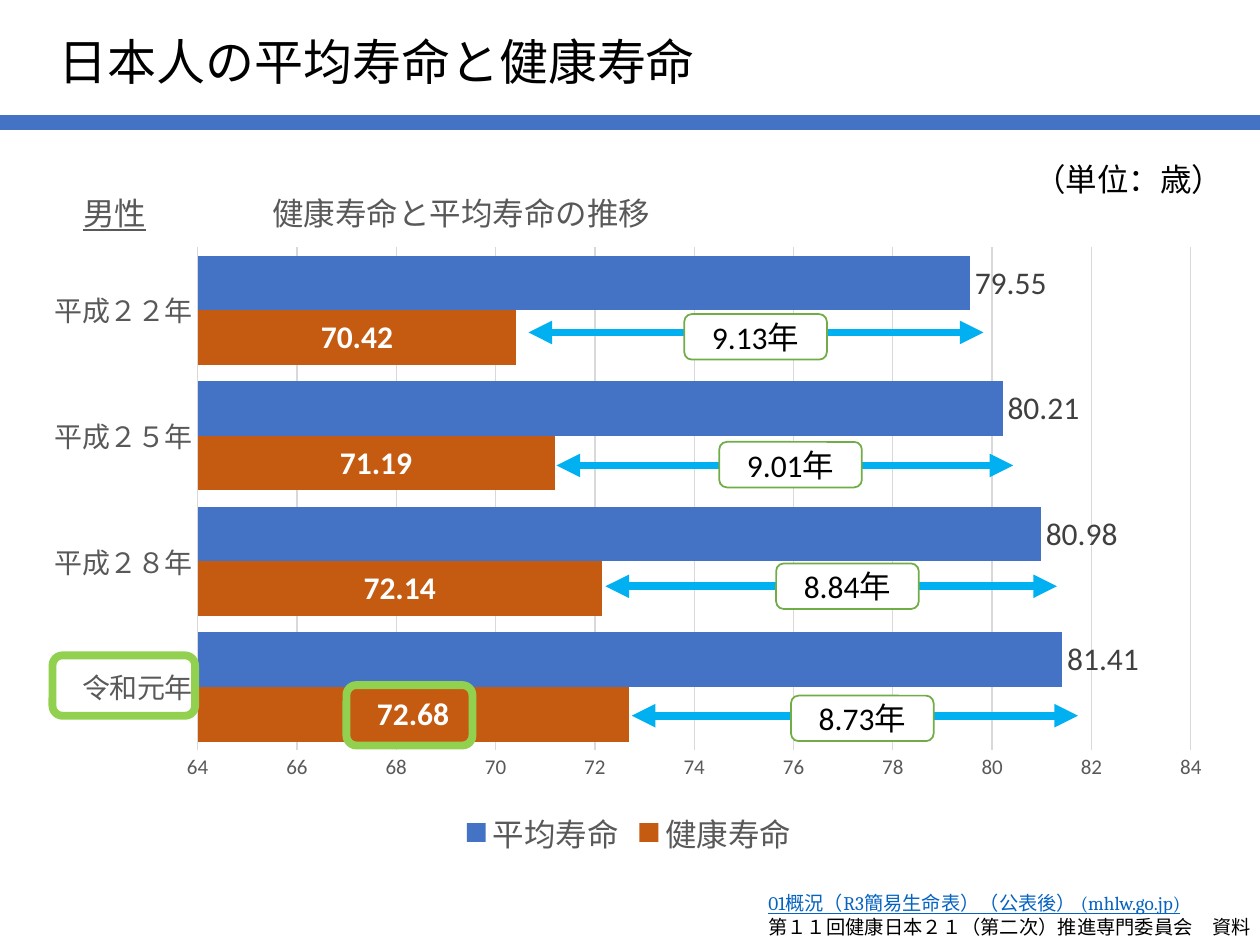
from pptx import Presentation
from pptx.chart.data import CategoryChartData
from pptx.dml.color import RGBColor
from pptx.enum.chart import XL_CHART_TYPE, XL_LABEL_POSITION, XL_LEGEND_POSITION, XL_TICK_MARK
from pptx.enum.shapes import MSO_CONNECTOR, MSO_SHAPE
from pptx.enum.text import MSO_ANCHOR, PP_ALIGN
from pptx.oxml import parse_xml
from pptx.oxml.ns import nsdecls, qn
from pptx.util import Pt
from lxml.etree import SubElement

THEME = {
    "font": "Calibri", "serif": "Cambria",
    "black": "000000", "white": "FFFFFF", "gray": "595959", "dark": "404040",
    "grid": "D9D9D9", "blue": "4472C4", "rust": "C55A11", "sky": "00B0F0",
    "lime": "92D050", "green": "70AD47", "link": "0563C1",
    "head": 28, "body": 18, "axis": 16, "tick": 12, "note": 11,
}

TITLE = "日本人の平均寿命と健康寿命"
UNIT = "（単位：歳）"
NOTES = [
    ("01概況（R3簡易生命表）（公表後） (mhlw.go.jp)", "link", True),
    ("第１１回健康日本２１（第二次）推進専門委員会　資料", "black", False),
]
HEADING = [("男性", True), ("　　　　健康寿命と平均寿命の推移", False)]
YEARS = ["令和元年", "平成２８年", "平成２５年", "平成２２年"]
# name, values, bar colour, label colour, bold label, label place
SERIES = [
    ("健康寿命", [72.68, 72.14, 71.19, 70.42], "rust", "white", True,
     XL_LABEL_POSITION.CENTER),
    ("平均寿命", [81.41, 80.98, 80.21, 79.55], "blue", "dark", False,
     XL_LABEL_POSITION.OUTSIDE_END),
]
# text, arrow start, arrow end, arrow height, badge left, badge top
GAPS = [
    ("9.13年", 302, 562, 190, 391, 179.5),
    ("9.01年", 318, 579, 266, 411, 252.5),
    ("8.84年", 346, 604, 335, 443.5, 322),
    ("8.73年", 361, 616, 409, 452, 397.5),
]
MARKS = [(30, 374.5, 81.5, 34.5), (198, 391.5, 72, 34.5)]


def color(key):
    return RGBColor.from_string(THEME[key])


def style(font, size, ink, face="font", bold=False, under=None):
    font.name = THEME[face]
    font.size = Pt(THEME[size])
    font.color.rgb = color(ink)
    font.bold = bold
    if under is not None:
        font.underline = under


def write(para, text, align=None, **form):
    run = para.add_run()
    run.text = text
    if align is not None:
        para.alignment = align
    style(run.font, **form)


def add_text(slide, left, top, width, height):
    frame = slide.shapes.add_textbox(Pt(left), Pt(top), Pt(width), Pt(height)).text_frame
    frame.word_wrap = True
    return frame


def add_line(slide, start, end, ink, weight, heads=False):
    line = slide.shapes.add_connector(
        MSO_CONNECTOR.STRAIGHT, *(Pt(n) for n in (*start, *end)))
    line.line.color.rgb = color(ink)
    line.line.width = Pt(weight)
    if heads:
        for tag in ("a:headEnd", "a:tailEnd"):
            SubElement(line.line._get_or_add_ln(), qn(tag), type="triangle")
    SubElement(line._element.spPr, qn("a:effectLst"))


def add_box(slide, place, ink, weight, fill=None):
    box = slide.shapes.add_shape(MSO_SHAPE.ROUNDED_RECTANGLE, *(Pt(n) for n in place))
    box.shadow.inherit = False
    if fill:
        box.fill.solid()
        box.fill.fore_color.rgb = color(fill)
    else:
        box.fill.background()
    box.line.color.rgb = color(ink)
    box.line.width = Pt(weight)
    return box


def layout(x, y, w=None, h=None):
    """Give a manual chart layout in shares of the chart's size."""
    inner = '<c:layoutTarget val="inner"/>' if w else ""
    size = f'<c:w val="{w}"/><c:h val="{h}"/>' if w else ""
    return parse_xml(
        f'<c:layout {nsdecls("c")}><c:manualLayout>{inner}<c:xMode val="edge"/>'
        f'<c:yMode val="edge"/><c:x val="{x}"/><c:y val="{y}"/>{size}'
        "</c:manualLayout></c:layout>")


def place(node, frame, after=None):
    """Swap in a manual layout, after the named child or first."""
    for old in node.findall(qn("c:layout")):
        node.remove(old)
    prior = node.find(qn(after)) if after else None
    if prior is None:
        node.insert(0, frame)
    else:
        prior.addnext(frame)


def add_bars(slide):
    data = CategoryChartData(number_format="0.00")
    data.categories = YEARS
    for name, values, *_ in SERIES:
        data.add_series(name, values)
    chart = slide.shapes.add_chart(
        XL_CHART_TYPE.BAR_CLUSTERED, Pt(18), Pt(88), Pt(683), Pt(404.5), data).chart
    style(chart.font, "tick", "gray")

    chart.has_title = True
    para = chart.chart_title.text_frame.paragraphs[0]
    for text, under in HEADING:
        write(para, text, size="body", ink="gray", under=under)
    chart.chart_title.include_in_layout = False
    place(chart.chart_title._element, layout(0.04, 0.04), "c:tx")
    place(chart._chartSpace.chart.plotArea, layout(0.139, 0.132, 0.831, 0.71))

    chart.has_legend = True
    chart.legend.position = XL_LEGEND_POSITION.BOTTOM
    chart.legend.include_in_layout = False
    style(chart.legend.font, "body", "gray")

    for axis, size in ((chart.category_axis, "axis"), (chart.value_axis, "tick")):
        axis.major_tick_mark = axis.minor_tick_mark = XL_TICK_MARK.NONE
        style(axis.tick_labels.font, size, "gray")
    ages = chart.value_axis
    ages.minimum_scale, ages.maximum_scale, ages.major_unit = 64, 84, 2
    ages.tick_labels.number_format = "0"
    ages.tick_labels.number_format_is_linked = False
    ages.format.line.fill.background()
    for line in (chart.category_axis.format.line, ages.major_gridlines.format.line):
        line.color.rgb = color("grid")
        line.width = Pt(0.75)

    plot = chart.plots[0]
    plot.gap_width = 30
    plot.overlap = 0
    plot.vary_by_categories = False
    for bars, (_, _, fill, ink, bold, spot) in zip(plot.series, SERIES):
        bars.format.fill.solid()
        bars.format.fill.fore_color.rgb = color(fill)
        labels = bars.data_labels
        labels.show_value = True
        labels.position = spot
        style(labels.font, "body", ink, bold=bold)


def main():
    deck = Presentation()
    deck.slide_width, deck.slide_height = Pt(720), Pt(540)
    slide = deck.slides.add_slide(deck.slide_layouts[6])

    add_line(slide, (0, 70), (720, 70), "blue", 9)
    write(add_text(slide, 584, 88, 124.5, 29).paragraphs[0], UNIT,
          size="body", ink="black")
    notes = add_text(slide, 432, 506, 298, 34)
    for i, (text, ink, under) in enumerate(NOTES):
        para = notes.add_paragraph() if i else notes.paragraphs[0]
        write(para, text, align=PP_ALIGN.JUSTIFY, size="note", ink=ink,
              face="serif", under=under)
    write(add_text(slide, 26.5, 14.5, 398, 41).paragraphs[0], TITLE,
          size="head", ink="black")

    add_bars(slide)
    for mark in MARKS:
        add_box(slide, mark, "lime", 4.5)
    for _, start, end, y, *_ in GAPS:
        add_line(slide, (start, y), (end, y), "sky", 4.5, heads=True)
    for text, _, _, _, left, top in GAPS:
        badge = add_box(slide, (left, top, 81.5, 26), "green", 1, fill="white")
        badge.text_frame.vertical_anchor = MSO_ANCHOR.MIDDLE
        write(badge.text_frame.paragraphs[0], text, align=PP_ALIGN.CENTER,
              size="body", ink="black")

    deck.save("out.pptx")


if __name__ == "__main__":
    main()
